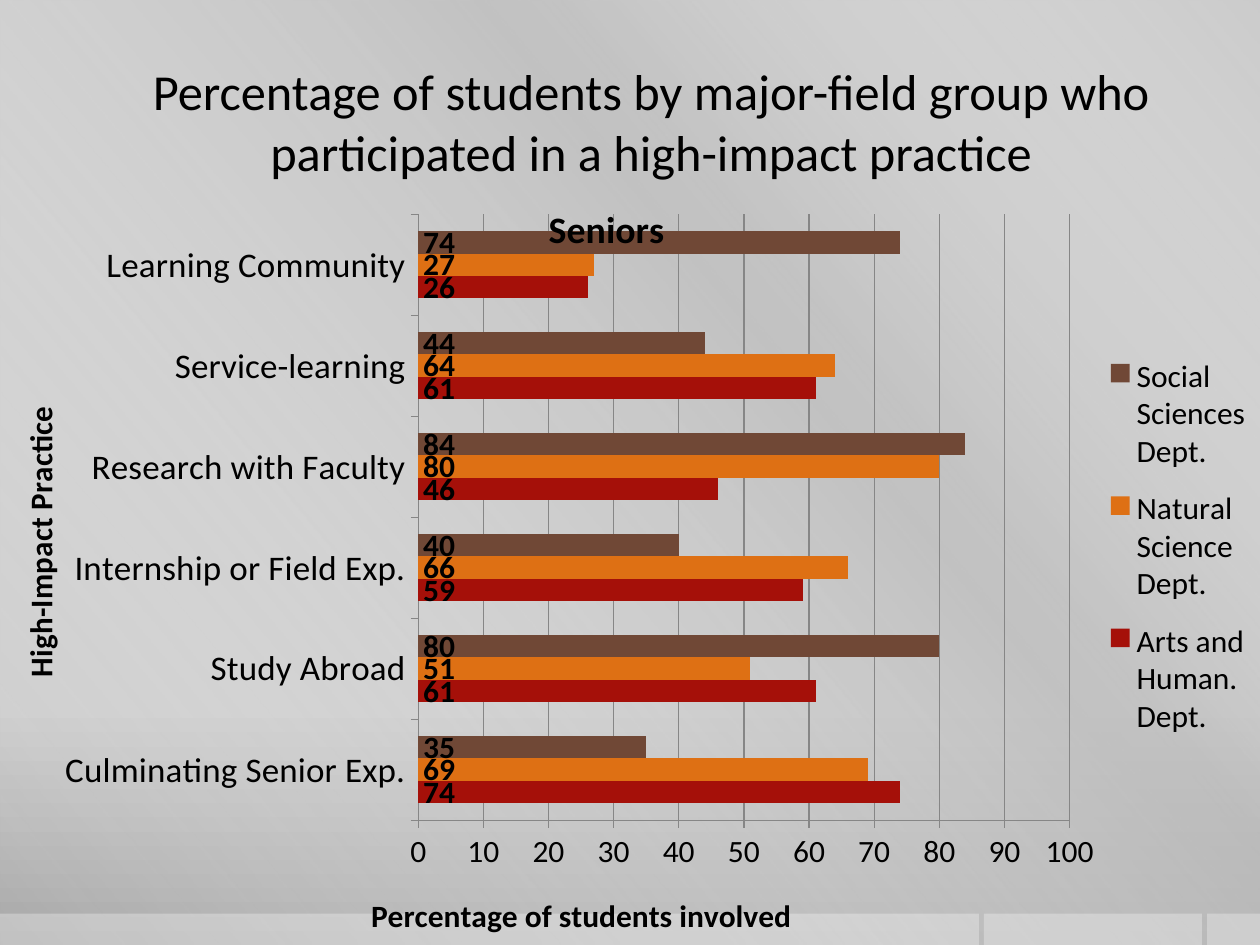
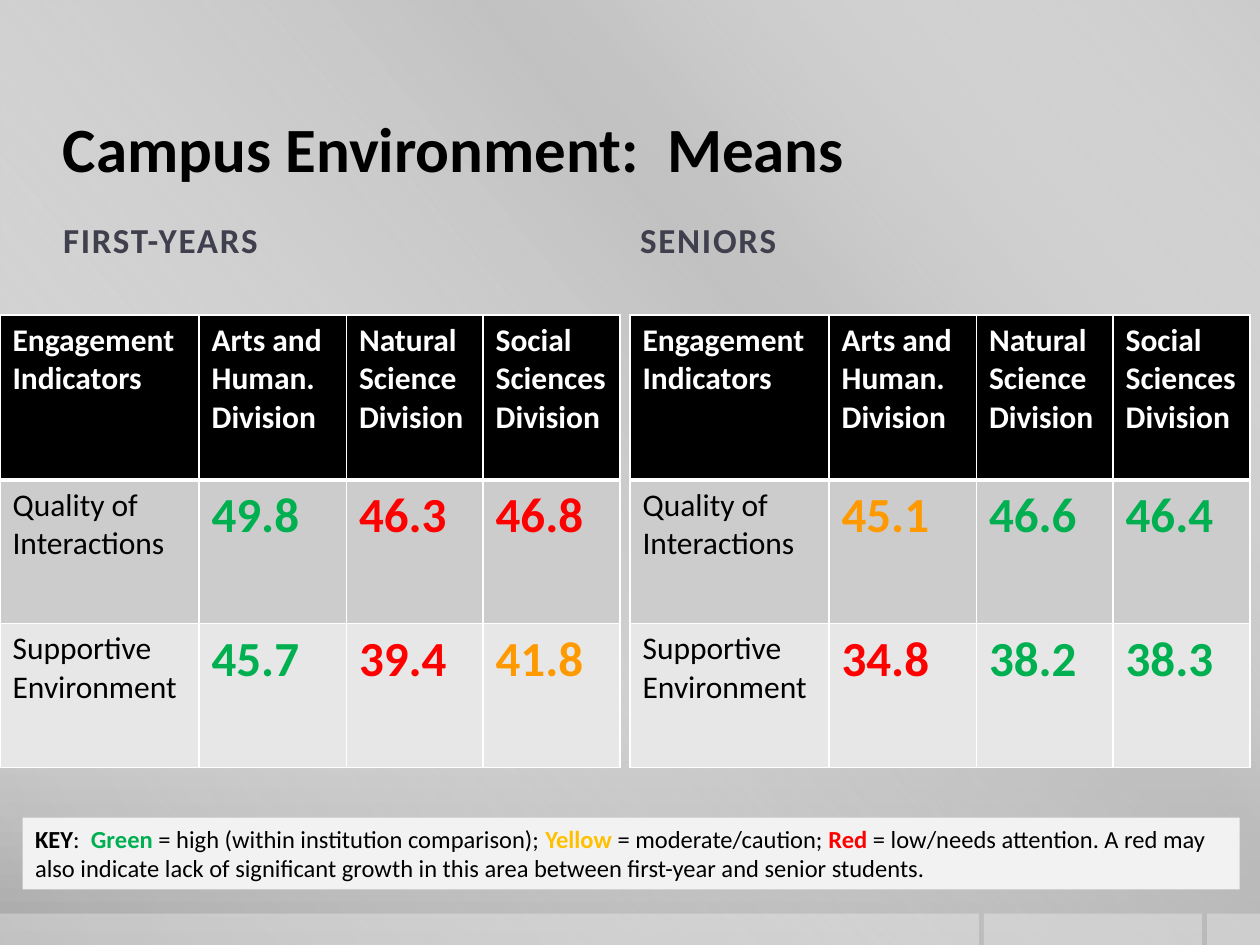
from dataclasses import dataclass

from lxml import etree
from pptx import Presentation
from pptx.chart.data import CategoryChartData
from pptx.dml.color import RGBColor
from pptx.enum.chart import XL_CHART_TYPE as ChartType
from pptx.enum.chart import XL_LABEL_POSITION as LabelPosition
from pptx.enum.chart import XL_LEGEND_POSITION as LegendPosition
from pptx.enum.chart import XL_TICK_MARK as TickMark
from pptx.enum.shapes import MSO_SHAPE as Preset
from pptx.enum.text import MSO_ANCHOR as Anchor
from pptx.enum.text import PP_ALIGN as Align
from pptx.oxml import parse_xml
from pptx.oxml.ns import nsdecls, qn
from pptx.util import Inches, Pt


@dataclass(frozen=True)
class Theme:
    font: str = "Calibri"
    black: str = "000000"
    white: str = "FFFFFF"
    heading: str = "3F3F4D"
    grid: str = "868686"
    key_fill: str = "F2F2F2"
    high: str = "00B050"
    moderate: str = "FF9900"
    low: str = "FF0000"
    key_yellow: str = "FFC000"
    row_fills: tuple = ("000000", "CCCCCC", "E7E7E7")
    title_size: float = 36
    long_title_size: float = 28.8
    score_size: float = 28
    chart_title_size: float = 21.6
    heading_size: float = 20
    body_size: float = 18
    key_size: float = 14


THEME = Theme()

BACKGROUND_STOPS = [(0, "CBCBCB", 100), (76, "C8C8C8", 100), (100, "A7A7A7", 100)]
SHEEN_STOPS = [(0, "FFFFFF", 0), (34, "BFBFBF", 61), (38, "BFBFBF", 76), (100, "FFFFFF", 0)]
FOOTER_BANDS = [(0, 7.77), (7.81, 1.73), (9.58, 0.42)]

PRACTICES = ["Culminating Senior Exp.", "Study Abroad", "Internship or Field Exp.",
             "Research with Faculty", "Service-learning", "Learning Community"]
DEPARTMENTS = [
    ("Arts and Human. Dept.", "A51009", (74, 61, 59, 46, 61, 26)),
    ("Natural Science Dept.", "DE7014", (69, 51, 66, 80, 64, 27)),
    ("Social Sciences Dept.", "704836", (35, 80, 40, 84, 44, 74)),
]

HEADER = ["Engagement Indicators", "Arts and Human. Division",
          "Natural Science\nDivision", "Social Sciences Division"]
HIGH, MODERATE, LOW = THEME.high, THEME.moderate, THEME.low
FIRST_YEAR_MEANS = [
    ("Quality of Interactions", [("49.8", HIGH), ("46.3", LOW), ("46.8", LOW)]),
    ("Supportive Environment", [("45.7", HIGH), ("39.4", LOW), ("41.8", MODERATE)]),
]
SENIOR_MEANS = [
    ("Quality of Interactions", [("45.1", MODERATE), ("46.6", HIGH), ("46.4", HIGH)]),
    ("Supportive Environment", [("34.8", LOW), ("38.2", HIGH), ("38.3", HIGH)]),
]
COLUMN_WIDTHS = (1.58, 1.17, 1.085, 1.085)
ROW_HEIGHTS = (1.31, 1.14, 1.14)

KEY_RUNS = [
    ("KEY", {"bold": True}),
    (":  ", {}),
    ("Green ", {"bold": True, "color": THEME.high}),
    ("= high (within institution comparison); ", {}),
    ("Yellow", {"bold": True, "color": THEME.key_yellow}),
    (" = moderate/caution; ", {}),
    ("Red", {"bold": True, "color": THEME.low}),
    (" = low/needs attention. A red may also indicate lack of significant growth "
     "in this area between first-year and senior students.", {}),
]


def inches(box):
    return [Inches(value) for value in box]


def set_font(font, size=THEME.body_size, color=THEME.black, bold=False):
    font.name = THEME.font
    font.size = Pt(size)
    font.bold = bold
    font.color.rgb = RGBColor.from_string(color)


def write_text(frame, content, align=Align.LEFT, spacing=None, **font_format):
    """Write a string (one paragraph per line) or a list of (text, format) runs."""
    if isinstance(content, str):
        lines = [[(line, {})] for line in content.split("\n")]
    else:
        lines = [content]
    for number, runs in enumerate(lines):
        paragraph = frame.add_paragraph() if number else frame.paragraphs[0]
        paragraph.alignment = align
        for text, changes in runs:
            run = paragraph.add_run()
            run.text = text
            set_font(run.font, **{**font_format, **changes})
            if spacing:
                run.font._element.set("spc", str(spacing * 100))


def gradient(stops, angle):
    fill = parse_xml(f'<a:gradFill {nsdecls("a")} rotWithShape="1"><a:gsLst/>'
                     f'<a:lin ang="{angle * 60000}" scaled="0"/></a:gradFill>')
    for position, color, opacity in stops:
        stop = etree.SubElement(fill[0], qn("a:gs"), pos=str(position * 1000))
        tint = etree.SubElement(stop, qn("a:srgbClr"), val=color)
        etree.SubElement(tint, qn("a:alpha"), val=str(opacity * 1000))
    return fill


def add_rectangle(slide, box, color, opacity=100):
    shape = slide.shapes.add_shape(Preset.RECTANGLE, *inches(box))
    shape.shadow.inherit = False
    shape.line.fill.background()
    shape.fill.solid()
    shape.fill.fore_color.rgb = RGBColor.from_string(color)
    if opacity < 100:
        tint = shape._element.spPr.find(f'.//{qn("a:srgbClr")}')
        etree.SubElement(tint, qn("a:alpha"), val=str(opacity * 1000))
    return shape


def add_text(slide, box, content, anchor=Anchor.MIDDLE, **text_format):
    frame = slide.shapes.add_textbox(*inches(box)).text_frame
    frame.word_wrap = True
    frame.vertical_anchor = anchor
    frame.margin_left = frame.margin_right = 0
    write_text(frame, content, **text_format)


def add_backdrop(slide):
    """Grey gradient, diagonal sheen and the translucent footer bands."""
    slide.background.fill.solid()
    solid = slide._element.find(f'.//{qn("p:bgPr")}/{qn("a:solidFill")}')
    solid.getparent().replace(solid, gradient(BACKGROUND_STOPS, 90))
    sheen = add_rectangle(slide, (0, 0, 10, 7.5), THEME.white)
    properties = sheen._element.spPr
    properties.replace(properties.find(qn("a:solidFill")), gradient(SHEEN_STOPS, 140))
    for left, width in FOOTER_BANDS:
        add_rectangle(slide, (left, 7.25, width, 0.25), THEME.white, opacity=30)


def place_in_chart(element, after=None, inner=False, **fractions):
    """Fix a chart part at fractions (x, y, w, h) of the chart's size."""
    for old in element.findall(qn("c:layout")):
        element.remove(old)
    layout = parse_xml(f'<c:layout {nsdecls("c")}><c:manualLayout/></c:layout>')
    settings = [("layoutTarget", "inner")] if inner else []
    settings += [("xMode", "edge"), ("yMode", "edge")]
    settings += [(key, str(value)) for key, value in fractions.items()]
    for key, value in settings:
        etree.SubElement(layout[0], qn(f"c:{key}"), val=value)
    if after:
        element.find(qn(after)).addnext(layout)
    else:
        element.insert(0, layout)


def add_chart_title(title, text, x, y, size=THEME.body_size):
    write_text(title.text_frame, text, align=None, size=size, bold=True)
    place_in_chart(title._element, after="c:tx", x=x, y=y)


def style_axis(axis, label_size):
    set_font(axis.tick_labels.font, size=label_size)
    axis.major_tick_mark = TickMark.OUTSIDE
    axis.minor_tick_mark = TickMark.NONE
    axis.format.line.color.rgb = RGBColor.from_string(THEME.grid)


def style_series(series, color):
    series.format.fill.solid()
    series.format.fill.fore_color.rgb = RGBColor.from_string(color)
    labels = series.data_labels
    labels.show_value = True
    labels.position = LabelPosition.INSIDE_BASE
    set_font(labels.font, bold=True)


def add_practice_chart(slide, box):
    data = CategoryChartData()
    data.categories = PRACTICES
    for name, _, values in DEPARTMENTS:
        data.add_series(name, values)
    chart = slide.shapes.add_chart(ChartType.BAR_CLUSTERED, *inches(box), data).chart
    set_font(chart.font)

    plot = chart.plots[0]
    plot.gap_width = 150
    plot.vary_by_categories = False
    for series, (_, color, _) in zip(plot.series, DEPARTMENTS):
        style_series(series, color)

    category_axis, value_axis = chart.category_axis, chart.value_axis
    style_axis(category_axis, THEME.heading_size)
    style_axis(value_axis, THEME.body_size)
    value_axis.minimum_scale, value_axis.maximum_scale = 0, 100
    value_axis.major_unit = 10
    value_axis.has_major_gridlines = True
    value_axis.major_gridlines.format.line.color.rgb = RGBColor.from_string(THEME.grid)

    chart.has_title = True
    add_chart_title(chart.chart_title, "Seniors", 0.43, 0.01, size=THEME.chart_title_size)
    add_chart_title(value_axis.axis_title, "Percentage of students involved", 0.29, 0.94)
    add_chart_title(category_axis.axis_title, "High-Impact Practice", 0.01, 0.29)
    category_axis.axis_title.text_frame._txBody.bodyPr.set("rot", "-5400000")

    chart.has_legend = True
    chart.legend.position = LegendPosition.RIGHT
    chart.legend.include_in_layout = False
    set_font(chart.legend.font)
    place_in_chart(chart.legend._element, after="c:legendPos", x=0.87, y=0.2, w=0.13, h=0.56)

    chart_space = chart._chartSpace
    plot_area = chart_space.find(f'.//{qn("c:plotArea")}')
    place_in_chart(plot_area, inner=True, x=0.332, y=0.034, w=0.517, h=0.814)
    no_fill = f'<c:spPr {nsdecls("c", "a")}><a:noFill/><a:ln><a:noFill/></a:ln></c:spPr>'
    plot_area.append(parse_xml(no_fill))
    chart_space.find(qn("c:chart")).addnext(parse_xml(no_fill))


def style_cell(cell, row):
    """White borders, with a heavy rule between header and body, and the row's fill."""
    weights = {"L": 1, "R": 1, "T": 3 if row == 1 else 1, "B": 3 if row == 0 else 1}
    properties = cell._tc.get_or_add_tcPr()
    for side, points in weights.items():
        properties.append(parse_xml(
            f'<a:ln{side} {nsdecls("a")} w="{Pt(points)}"><a:solidFill>'
            f'<a:srgbClr val="{THEME.white}"/></a:solidFill></a:ln{side}>'))
    cell.fill.solid()
    cell.fill.fore_color.rgb = RGBColor.from_string(THEME.row_fills[row])


def add_means_table(slide, left, top, means):
    box = (left, top, sum(COLUMN_WIDTHS), sum(ROW_HEIGHTS))
    table = slide.shapes.add_table(len(ROW_HEIGHTS), len(COLUMN_WIDTHS), *inches(box)).table
    table.horz_banding = False
    for column, width in zip(table.columns, COLUMN_WIDTHS):
        column.width = Inches(width)
    rows = [[(text, {"color": THEME.white, "bold": True}) for text in HEADER]]
    for indicator, scores in means:
        rows.append([(indicator, {})] + [
            (score, {"size": THEME.score_size, "color": color, "bold": True})
            for score, color in scores])
    for row, (height, entries) in enumerate(zip(ROW_HEIGHTS, rows)):
        table.rows[row].height = Inches(height)
        for column, (text, text_format) in enumerate(entries):
            cell = table.cell(row, column)
            style_cell(cell, row)
            write_text(cell.text_frame, text, **text_format)


def add_key(slide, box):
    frame = add_rectangle(slide, box, THEME.key_fill).text_frame
    frame.word_wrap = True
    frame.vertical_anchor = Anchor.TOP
    write_text(frame, KEY_RUNS, size=THEME.key_size)


def build_practice_slide(slide):
    add_backdrop(slide)
    add_text(slide, (0.67, 0.5, 9, 0.92),
             "Percentage of students by major-field group who participated "
             "in a high-impact practice",
             align=Align.CENTER, size=THEME.long_title_size)
    add_practice_chart(slide, (0, 1.5, 10, 6))


def build_environment_slide(slide):
    add_backdrop(slide)
    add_text(slide, (0.5, 0.67, 9, 1), "Campus Environment:  Means",
             size=THEME.title_size, bold=True)
    groups = [("FIRST-YEARS", 0.5, 0, FIRST_YEAR_MEANS), ("SENIORS", 5.08, 5, SENIOR_MEANS)]
    for heading, heading_left, table_left, means in groups:
        add_text(slide, (heading_left, 1.67, 4.42, 0.45), heading, anchor=Anchor.BOTTOM,
                 size=THEME.heading_size, color=THEME.heading, bold=True, spacing=1)
        add_means_table(slide, table_left, 2.5, means)
    add_key(slide, (0.18, 6.49, 9.66, 0.57))


def main():
    presentation = Presentation()
    presentation.slide_width, presentation.slide_height = Inches(10), Inches(7.5)
    blank = presentation.slide_layouts[6]
    for build in (build_practice_slide, build_environment_slide):
        build(presentation.slides.add_slide(blank))
    presentation.save("out.pptx")


if __name__ == "__main__":
    main()
